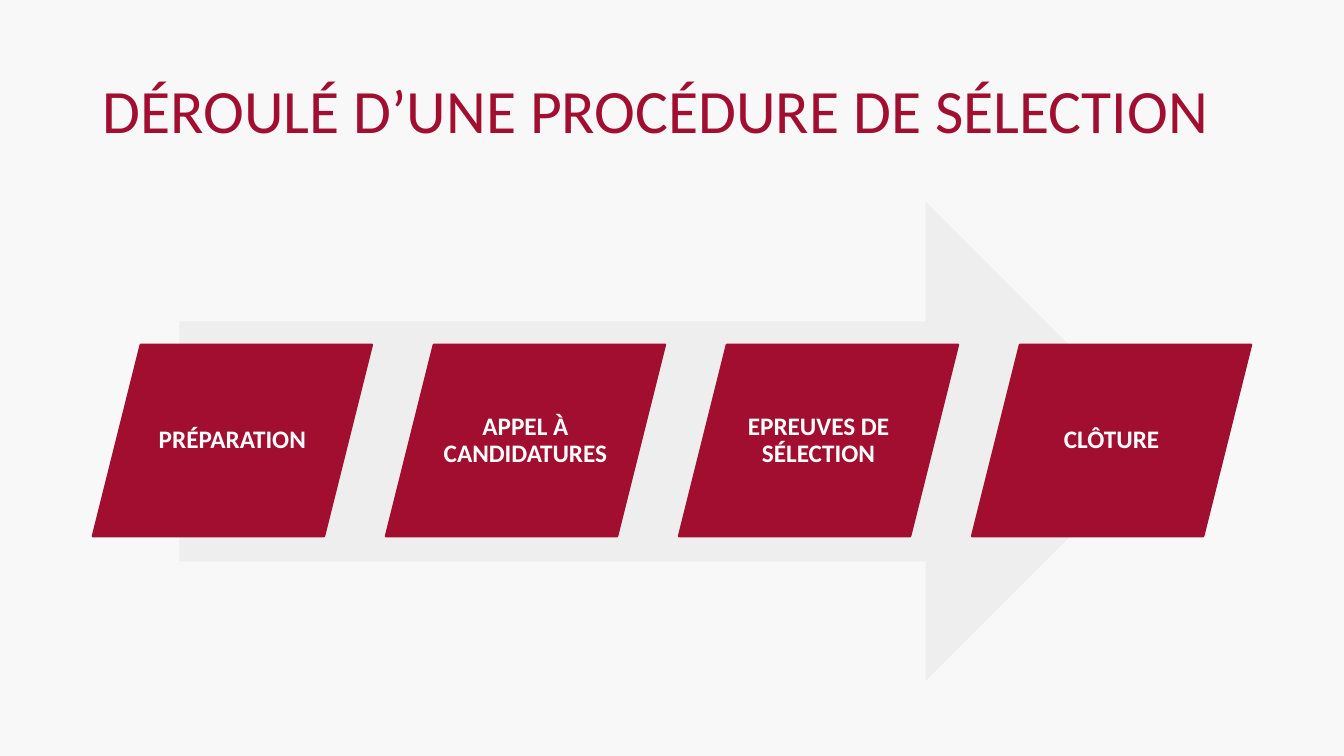
import pptx
import pptx.dml.color
import pptx.enum.shapes
import pptx.enum.text
import pptx.oxml
import pptx.oxml.ns
import pptx.util

Inches = pptx.util.Inches
Pt = pptx.util.Pt
SHAPES = pptx.enum.shapes.MSO_SHAPE
ALIGN = pptx.enum.text.PP_ALIGN
MIDDLE = pptx.enum.text.MSO_ANCHOR.MIDDLE

COLORS = {
    "background": "F8F8F8",
    "crimson": "A10E2F",
    "arrow": "EAEAEA",
    "white": "FFFFFF",
}
STEPS = ["PRÉPARATION", "APPEL À CANDIDATURES", "EPREUVES DE SÉLECTION", "CLÔTURE"]


class ProcessSlide:
    """Holds the style and the current page."""

    font_name = "Calibri"

    def __init__(self, page):
        self.page = page
        self.paint(page.background.fill, "background")

    def color(self, name):
        return pptx.dml.color.RGBColor.from_string(COLORS[name])

    def paint(self, fill, name):
        fill.solid()
        fill.fore_color.rgb = self.color(name)

    def set_text(self, frame, text, size, color, align, bold=False, inset=None):
        frame_format = {"word_wrap": True, "vertical_anchor": MIDDLE}
        if inset is not None:
            for side in ("left", "top", "right", "bottom"):
                frame_format[f"margin_{side}"] = Inches(inset)
        para = frame.paragraphs[0]
        span = para.add_run()
        span.text = text
        formats = [
            (frame, frame_format),
            (para, {"alignment": align, "line_spacing": 0.9}),
            (span.font, {"name": self.font_name, "size": Pt(size), "bold": bold}),
        ]
        for target, values in formats:
            for key, value in values.items():
                setattr(target, key, value)
        span.font.color.rgb = self.color(color)

    def title(self, text, left, top, width, height):
        box = self.page.shapes.add_textbox(
            Inches(left), Inches(top), Inches(width), Inches(height))
        self.set_text(box.text_frame, text, 44, "crimson", ALIGN.LEFT)

    def shape(self, kind, color, left, top, width, height):
        shape = self.page.shapes.add_shape(
            kind, Inches(left), Inches(top), Inches(width), Inches(height))
        shape.shadow.inherit = False
        self.paint(shape.fill, color)
        shape.line.fill.background()
        return shape

    def arrow(self, left, top, width, height, opacity):
        arrow = self.shape(SHAPES.RIGHT_ARROW, "arrow", left, top, width, height)
        fill_color = arrow.element.find(".//" + pptx.oxml.ns.qn("a:srgbClr"))
        fill_color.append(pptx.oxml.parse_xml(
            f'<a:alpha {pptx.oxml.ns.nsdecls("a")} val="{opacity * 1000}"/>'))

    def step(self, text, left, top, width, height):
        step = self.shape(SHAPES.PARALLELOGRAM, "crimson", left, top, width, height)
        self.paint(step.line.fill, "crimson")
        step.line.width = Pt(1.5)
        self.set_text(step.text_frame, text, 18, "white", ALIGN.CENTER, True, 0.07)


def main():
    deck = pptx.Presentation()
    deck.slide_width, deck.slide_height = Inches(13.33), Inches(7.5)
    slide = ProcessSlide(deck.slides.add_slide(deck.slide_layouts[6]))

    # Title
    slide.title("DÉROULÉ D’UNE PROCÉDURE DE SÉLECTION", 0.92, 0.4, 11.5, 1.45)

    # Background arrow
    slide.arrow(1.78, 2, 9.78, 4.76, opacity=70)

    # Steps, evenly spread between the outer edges
    first, last, width = 0.92, 9.64, 2.77
    pitch = (last - first) / (len(STEPS) - 1)
    for index, text in enumerate(STEPS):
        slide.step(text, first + index * pitch, 3.42, width, 1.9)

    deck.save("out.pptx")


if __name__ == "__main__":
    main()
